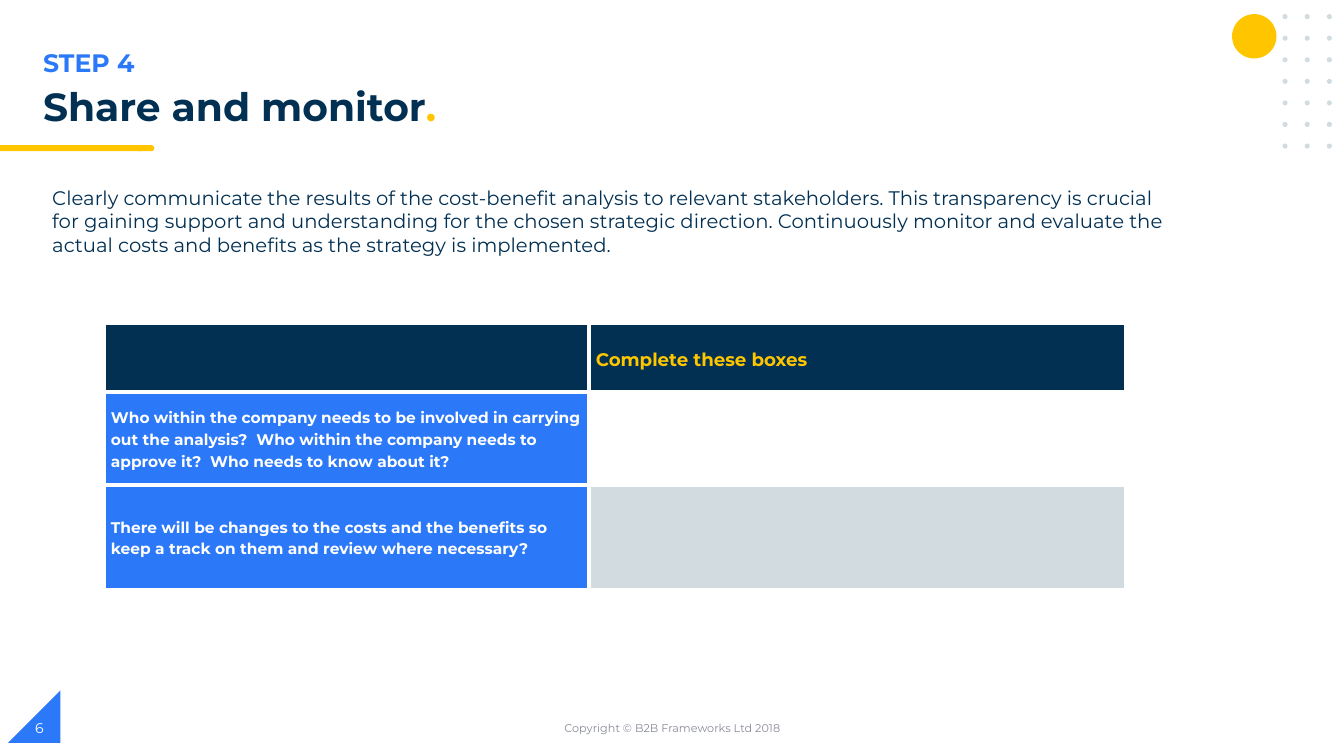
from lxml import etree
from pptx import Presentation
from pptx import util as u
from pptx.dml.color import RGBColor
from pptx.enum import shapes, text
from pptx.oxml.ns import qn

FONT = "Montserrat"
NAVY, BLUE, YELLOW = "023053", "2B79F8", "FFC600"
PALE, GREY, WHITE = "D1DBE0", "888C97", "FFFFFF"
KIND = shapes.MSO_SHAPE
MIDDLE = text.MSO_ANCHOR.MIDDLE


def paint(color_format, color):
    """Set a colour format to a hex colour."""
    color_format.rgb = RGBColor.from_string(color)


def fill(target, color):
    """Give a shape or cell a solid fill."""
    target.fill.solid()
    paint(target.fill.fore_color, color)


def style(font, size, color, bold=False):
    """Set typeface, size, colour and weight."""
    font.name, font.size, font.bold = FONT, u.Pt(size), bold
    paint(font.color, color)


def add_shape(slide, kind, box, color):
    """Add a flat preset shape without an outline."""
    shape = slide.shapes.add_shape(kind, *map(u.Inches, box))
    shape.shadow.inherit = False
    shape.line.fill.background()
    fill(shape, color)
    return shape


def add_text(slide, box, words, size, color, bold=False, anchor=text.MSO_ANCHOR.TOP):
    """Add a wrapping one-paragraph text box and return the paragraph."""
    frame = slide.shapes.add_textbox(*map(u.Inches, box)).text_frame
    frame.word_wrap = True
    frame.vertical_anchor = anchor
    paragraph = frame.paragraphs[0]
    paragraph.text = words
    style(paragraph.font, size, color, bold)
    return paragraph


def add_borders(cell, color, width):
    """Draw all four borders of a cell, ahead of its fill."""
    properties = cell._tc.get_or_add_tcPr()
    for index, side in enumerate(("lnL", "lnR", "lnT", "lnB")):
        line = etree.Element(qn(f"a:{side}"), w=str(u.Pt(width)))
        solid = etree.SubElement(line, qn("a:solidFill"))
        etree.SubElement(solid, qn("a:srgbClr"), val=color)
        properties.insert(index, line)


def fill_cell(cell, words, background, size, color):
    """Set the fill, borders and bold text of a table cell."""
    fill(cell, background)
    add_borders(cell, WHITE, 3)
    cell.vertical_anchor = MIDDLE
    cell.margin_left = cell.margin_right = u.Inches(0.07)
    cell.margin_top = cell.margin_bottom = 0
    paragraph = cell.text_frame.paragraphs[0]
    paragraph.text = words
    paragraph.line_spacing = 1.15
    style(paragraph.font, size, color, True)


def add_worksheet(slide):
    """Add the table of questions and boxes to complete."""
    widths, heights = (4.81, 5.33), (0.68, 0.92, 1.04)
    rows = [
        [("", NAVY, 13, YELLOW), ("Complete these boxes", NAVY, 13, YELLOW)],
        [("Who within the company needs to be involved in carrying out the analysis?  "
          "Who within the company needs to approve it?  Who needs to know about it?",
          BLUE, 11, WHITE), ("", WHITE, 11, NAVY)],
        [("There will be changes to the costs and the benefits so keep a track on them "
          "and review where necessary?", BLUE, 11, WHITE), ("", PALE, 11, NAVY)],
    ]
    box = (1.03, 3.21, sum(widths), sum(heights))
    table = slide.shapes.add_table(len(rows), len(widths), *map(u.Inches, box)).table
    for column, width in zip(table.columns, widths):
        column.width = u.Inches(width)
    for row, height, contents in zip(table.rows, heights, rows):
        row.height = u.Inches(height)
        for cell, content in zip(row.cells, contents):
            fill_cell(cell, *content)


def add_decoration(slide):
    """Add the page corner, title underline, sun and dot grid."""
    corner = add_shape(slide, KIND.RIGHT_TRIANGLE, (0.08, 6.85, 0.52, 0.52), BLUE)
    corner._element.spPr.get_or_add_xfrm().set("flipH", "1")
    add_shape(slide, KIND.FLOWCHART_TERMINATOR, (1.34, 1.44, 0.19, 0.06), YELLOW)
    add_shape(slide, KIND.RECTANGLE, (0, 1.44, 1.41, 0.06), YELLOW)
    add_shape(slide, KIND.OVAL, (12.22, 0.14, 0.44, 0.44), YELLOW)
    for row in range(7):
        for column in range(3):
            left, top = 12.72 + 0.22 * column, 0.14 + 0.214 * row
            add_shape(slide, KIND.OVAL, (left, top, 0.05, 0.05), PALE)


def main():
    """Build the slide and save it."""
    deck = Presentation()
    deck.slide_width, deck.slide_height = u.Inches(13.33), u.Inches(7.5)
    slide = deck.slides.add_slide(deck.slide_layouts[6])
    add_decoration(slide)
    add_text(slide, (0.33, 0.42, 6.69, 0.4), "STEP 4", 18, BLUE, True)
    title = add_text(slide, (0.33, 0.82, 12.08, 0.56), "Share and monitor", 28, NAVY, True)
    title.line_spacing = 0.9
    full_stop = title.add_run()
    full_stop.text = "."
    paint(full_stop.font.color, YELLOW)
    add_text(slide, (0.42, 1.79, 11.23, 0.81),
             "Clearly communicate the results of the cost-benefit analysis to relevant "
             "stakeholders. This transparency is crucial for gaining support and "
             "understanding for the chosen strategic direction. Continuously monitor and "
             "evaluate the actual costs and benefits as the strategy is implemented.",
             14, NAVY)
    add_worksheet(slide)
    copyright_line = add_text(slide, (4.42, 7.02, 4.5, 0.4),
                              "Copyright © B2B Frameworks Ltd 2018", 8, GREY, anchor=MIDDLE)
    copyright_line.alignment = text.PP_ALIGN.CENTER
    add_text(slide, (0.25, 7.02, 3, 0.4), "6", 10, WHITE, anchor=MIDDLE)
    deck.save("out.pptx")


if __name__ == "__main__":
    main()
